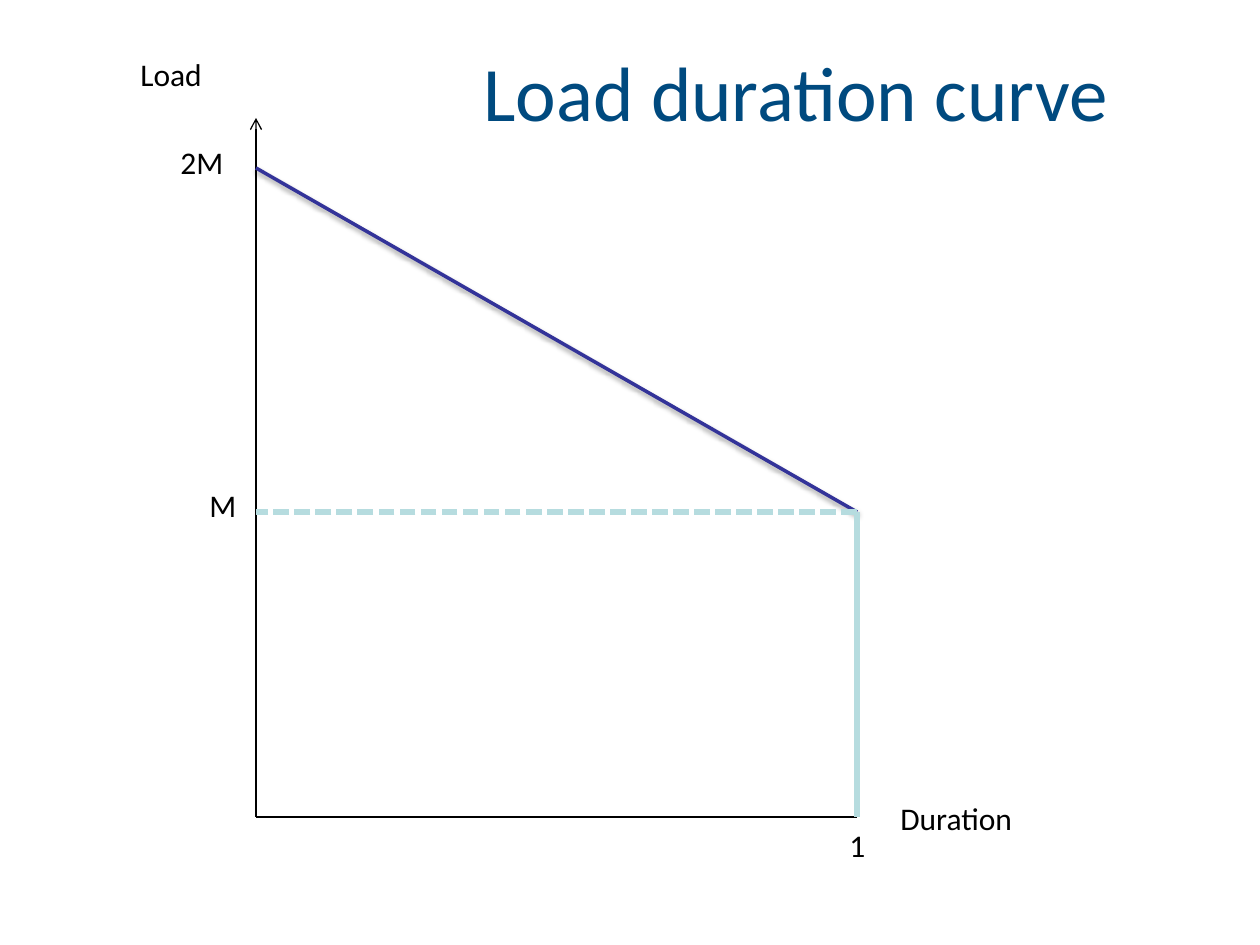
from lxml.etree import SubElement
from pptx import Presentation
from pptx.dml.color import RGBColor
from pptx.enum.dml import MSO_LINE as Dash
from pptx.enum.shapes import MSO_CONNECTOR as Link
from pptx.oxml.ns import qn
from pptx.util import Emu, Pt

# Plot corners in px
LEFT, RIGHT = 256, 857
TIP, PEAK, BASE, FLOOR = 118, 168, 512, 817

BLACK, NAVY, AQUA, BLUE = "000000", "333399", "B6DCDF", "004A7F"

# start, end, colour, points, extras
LINES = [
    ((LEFT, FLOOR), (LEFT, TIP), BLACK, 0.75, {"arrow": True}),
    ((LEFT, FLOOR), (RIGHT, FLOOR), BLACK, 0.75, {}),
    ((LEFT, PEAK), (RIGHT, BASE), NAVY, 2, {"shade": True}),
    ((RIGHT, BASE), (RIGHT, FLOOR), AQUA, 3, {}),
    ((RIGHT, BASE), (LEFT, BASE), AQUA, 3, {"dash": Dash.SQUARE_DOT}),
]

# text, (left, top, width, height), size, colour
TEXTS = [
    ("M", (197, 480, 39, 50), 18, BLACK),
    ("2M", (168, 137, 69, 50), 18, BLACK),
    ("1", (837, 820, 39, 50), 18, BLACK),
    ("Duration", (888, 793, 149, 50), 18, BLACK),
    ("Load", (128, 49, 129, 50), 18, BLACK),
    ("Load duration curve", (471, 38, 726, 158), 44, BLUE),
]


def px(n):
    return Emu(round(n * 914400 / 126))


def tint(code):
    return RGBColor.from_string(code)


def add_shade(effects):
    """Add a soft shadow straight below the line."""
    shade = SubElement(effects, qn("a:outerShdw"), blurRad="40000",
                       dist="20000", dir="5400000", rotWithShape="0")
    color = SubElement(shade, qn("a:srgbClr"), val=BLACK)
    SubElement(color, qn("a:alpha"), val="38000")


def add_line(shapes, start, end, color, width, extras):
    link = shapes.add_connector(Link.STRAIGHT, *map(px, start + end))
    line = link.line
    line.color.rgb = tint(color)
    line.width = Pt(width)
    if "dash" in extras:
        line.dash_style = extras["dash"]
    props = link._element.spPr
    if "arrow" in extras:
        SubElement(props.find(qn("a:ln")), qn("a:tailEnd"), type="arrow")
    effects = SubElement(props, qn("a:effectLst"))
    if "shade" in extras:
        add_shade(effects)


def add_text(shapes, text, box, size, color):
    frame = shapes.add_textbox(*map(px, box)).text_frame
    frame.word_wrap = True
    run = frame.paragraphs[0].add_run()
    run.text = text
    for key, value in {"name": "Calibri", "size": Pt(size)}.items():
        setattr(run.font, key, value)
    run.font.color.rgb = tint(color)


def main():
    deck = Presentation()
    deck.slide_width, deck.slide_height = px(1260), px(945)
    shapes = deck.slides.add_slide(deck.slide_layouts[6]).shapes
    for item in LINES:
        add_line(shapes, *item)
    for item in TEXTS:
        add_text(shapes, *item)
    deck.save("out.pptx")


if __name__ == "__main__":
    main()
